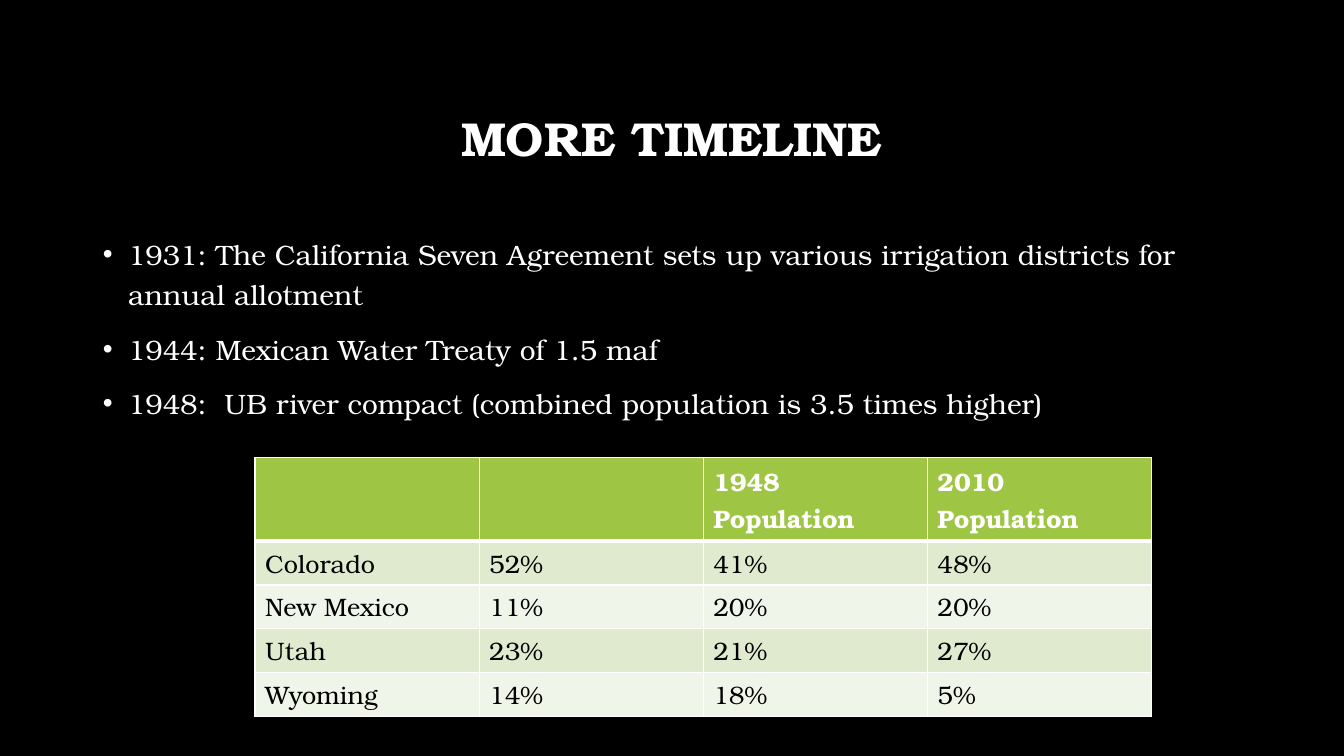
"""Build the "More timeline" slide with its water compact table."""
from lxml import etree
from pptx import Presentation
from pptx.dml.color import RGBColor
from pptx.enum.text import MSO_ANCHOR, MSO_AUTO_SIZE, PP_ALIGN
from pptx.oxml.ns import qn
from pptx.util import Inches, Pt

CENTER = PP_ALIGN.CENTER
TOP, MIDDLE = MSO_ANCHOR.TOP, MSO_ANCHOR.MIDDLE
NO_AUTOFIT = MSO_AUTO_SIZE.NONE
FONT = "TeX Gyre Bonum"
WHITE, BLACK, GREEN = "FFFFFF", "000000", "9EC544"
BANDS = ["DFEACF", "F0F5E9"]

EVENTS = [
    "1931: The California Seven Agreement sets up various irrigation districts for annual allotment",
    "1944: Mexican Water Treaty of 1.5 maf",
    "1948:  UB river compact (combined population is 3.5 times higher)",
]
SHARES = [
    ["", "", "1948 Population", "2010 Population"],
    ["Colorado", "52%", "41%", "48%"],
    ["New Mexico", "11%", "20%", "20%"],
    ["Utah", "23%", "21%", "27%"],
    ["Wyoming", "14%", "18%", "5%"],
]


def rgb(color):
    return RGBColor.from_string(color)


def style(font, color, **values):
    for key, value in {"name": FONT, **values}.items():
        setattr(font, key, value)
    font.color.rgb = rgb(color)


prs = Presentation()
prs.slide_width, prs.slide_height = Inches(13.33), Inches(7.5)
slide = prs.slides.add_slide(prs.slide_layouts[1])
slide.background.fill.solid()
slide.background.fill.fore_color.rgb = rgb(BLACK)

heading, timeline = slide.shapes.title, slide.placeholders[1]
frames = [
    (heading, (1, 0.67, 11.32, 1.45), {"vertical_anchor": MIDDLE}),
    (timeline, (0.92, 1.69, 11.5, 4.76), {"vertical_anchor": TOP, "margin_top": Inches(0.6)}),
]
for holder, box, layout in frames:
    holder.left, holder.top, holder.width, holder.height = map(Inches, box)
    for key, value in {"word_wrap": True, "auto_size": NO_AUTOFIT, **layout}.items():
        setattr(holder.text_frame, key, value)

heading.text_frame.text = "MORE TIMELINE"
heading_line = heading.text_frame.paragraphs[0]
heading_line.alignment = CENTER
heading_line.line_spacing = 0.9
style(heading_line.runs[0].font, WHITE, size=Pt(34), bold=True)

timeline.text_frame.text = "\n".join(EVENTS)
for event in timeline.text_frame.paragraphs:
    event.line_spacing = 1.2
    event.space_before = Pt(10)
    style(event.runs[0].font, WHITE, size=Pt(20))
    event_format = event._p.get_or_add_pPr()
    event_format.set("marL", str(Inches(0.25)))
    event_format.set("indent", str(Inches(-0.25)))
    etree.SubElement(event_format, qn("a:buChar")).set("char", "•")

shares = slide.shapes.add_table(
    len(SHARES), len(SHARES[0]), Inches(2.53), Inches(4.54), Inches(8.89), Inches(2.03)
).table
for r, entries in enumerate(SHARES):
    is_header = r == 0
    for c, entry in enumerate(entries):
        cell = shares.cell(r, c)
        cell_format = cell._tc.get_or_add_tcPr()
        widths = {"lnL": 1, "lnR": 1, "lnT": 3 if r == 1 else 1, "lnB": 3 if is_header else 1}
        for side, width in widths.items():
            border = etree.SubElement(cell_format, qn(f"a:{side}"), w=str(Pt(width)))
            border_fill = etree.SubElement(border, qn("a:solidFill"))
            etree.SubElement(border_fill, qn("a:srgbClr"), val=WHITE)
        cell.fill.solid()
        cell.fill.fore_color.rgb = rgb(GREEN if is_header else BANDS[(r - 1) % 2])
        if entry:
            cell.text = entry
            entry_font = cell.text_frame.paragraphs[0].runs[0].font
            style(entry_font, WHITE if is_header else BLACK, size=Pt(18), bold=is_header)

prs.save("out.pptx")
